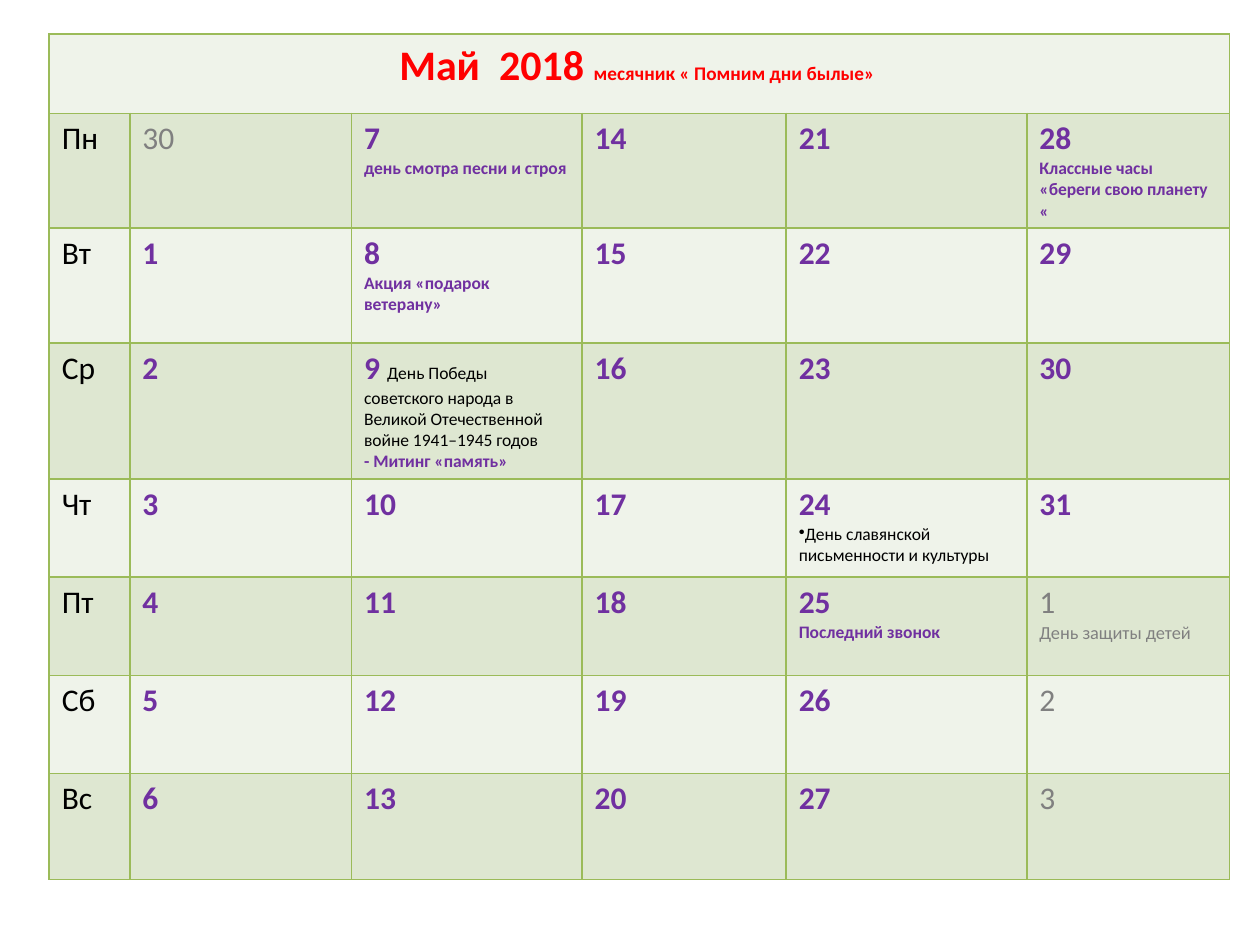
from lxml import etree
from pptx import Presentation
from pptx.dml.color import RGBColor
from pptx.enum import text
from pptx.oxml import ns
from pptx.util import Inches, Pt

COLORS = {"border": "9BBB59", "light": "EFF3EA", "dark": "DEE7D1", "title": "FF0000",
          "may": "7030A0", "other": "808080", "plain": "000000"}
WEEKDAYS = ["Пн", "Вт", "Ср", "Чт", "Пт", "Сб", "Вс"]
COLUMNS = [0.64, 1.76, 1.83, 1.62, 1.91, 1.61]
ROWS = [0.63, 0.8, 0.91, 1, 0.78, 0.78, 0.78, 0.84]
APRIL_30, MAY_9, MAY_24, JUNE_1 = 0, 9, 24, 32

# Keyed by days since 30 April: text, size, color, bold
EVENTS = {
    7: ("день смотра песни и строя", 10, "may", True),
    8: ("Акция «подарок ветерану»", 10, "may", True),
    MAY_9: ("- Митинг «память»", 10, "may", True),
    MAY_24: ("День славянской письменности и культуры", 10, "plain", False),
    25: ("Последний звонок", 10, "may", True),
    28: ("Классные часы «береги свою планету\v«", 10, "may", True),
    JUNE_1: ("День защиты детей", 10.5, "other", False),
}


def style(font, size, color, bold):
    font.name = "Calibri"
    font.size = Pt(size)
    font.bold = bold
    font.color.rgb = RGBColor.from_string(COLORS[color])


def format_cell(cell, fill):
    """Draw the four borders, then the fill, as the schema orders them."""
    props = cell._tc.get_or_add_tcPr()
    for side in ("lnL", "lnR", "lnT", "lnB"):
        line = etree.SubElement(props, ns.qn("a:" + side), w=str(Pt(1)))
        solid = etree.SubElement(line, ns.qn("a:solidFill"))
        etree.SubElement(solid, ns.qn("a:srgbClr"), val=COLORS["border"])
    cell.fill.solid()
    cell.fill.fore_color.rgb = RGBColor.from_string(COLORS[fill])


deck = Presentation()
deck.slide_width, deck.slide_height = Inches(10), Inches(7.5)
page = deck.slides.add_slide(deck.slide_layouts[6])
calendar = page.shapes.add_table(len(ROWS), len(COLUMNS), Inches(0.39), Inches(0.27),
                                 Inches(sum(COLUMNS)), Inches(sum(ROWS))).table
for column, width in zip(calendar.columns, COLUMNS):
    column.width = Inches(width)
for row_index, (row, height) in enumerate(zip(calendar.rows, ROWS)):
    row.height = Inches(height)
    for cell in row.cells:
        format_cell(cell, "dark" if row_index % 2 else "light")

# Title row
header = calendar.cell(0, 0)
header.merge(calendar.cell(0, len(COLUMNS) - 1))
para = header.text_frame.paragraphs[0]
para.alignment = text.PP_ALIGN.CENTER
for words, size in (("Май  2018 ", 24), ("месячник « Помним дни былые» ", 11)):
    span = para.add_run()
    span.text = words
    style(span.font, size, "title", True)

# One row per weekday, one column per week
for day, weekday in enumerate(WEEKDAYS):
    para = calendar.cell(day + 1, 0).text_frame.paragraphs[0]
    para.text = weekday
    style(para.font, 18, "plain", False)

    for week in range(len(COLUMNS) - 1):
        offset = day + 7 * week
        in_may = APRIL_30 < offset < JUNE_1
        number = offset if in_may else 30 if offset == APRIL_30 else offset - 31
        frame = calendar.cell(day + 1, week + 1).text_frame
        para = frame.paragraphs[0]
        span = para.add_run()
        span.text = str(number)
        style(span.font, 18, "may" if in_may else "other", in_may)

        if offset == MAY_9:
            span.text += " "
            holiday = para.add_run()
            holiday.text = ("День Победы советского народа в Великой Отечественной "
                            "войне 1941–1945 годов")
            style(holiday.font, 10, "plain", False)
        if offset in EVENTS:
            words, size, color, bold = EVENTS[offset]
            para = frame.add_paragraph()
            para.text = words
            style(para.font, size, color, bold)
        if offset == MAY_24:
            props = para._p.get_or_add_pPr()
            bullet = etree.Element(ns.qn("a:buChar"), char="•")
            props.insert(0, bullet)

deck.save("out.pptx")
